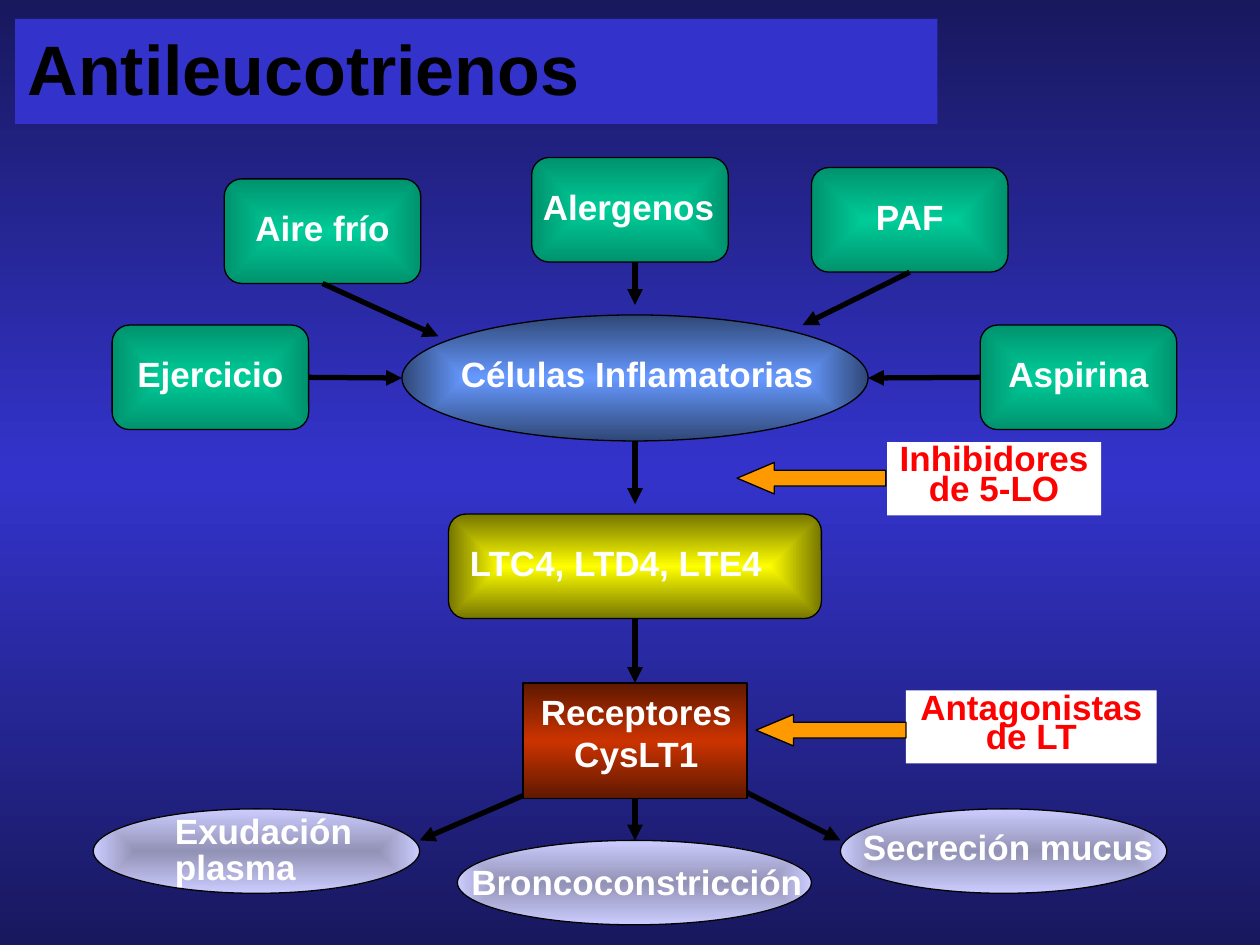
from lxml import etree
from pptx import Presentation
from pptx.dml.color import RGBColor
from pptx.enum.shapes import MSO_CONNECTOR, MSO_SHAPE
from pptx.enum.text import MSO_ANCHOR, MSO_AUTO_SIZE, PP_ALIGN
from pptx.oxml.ns import qn
from pptx.util import Inches, Pt

BLACK = RGBColor(0x00, 0x00, 0x00)
WHITE = RGBColor(0xFF, 0xFF, 0xFF)
RED = RGBColor(0xFF, 0x00, 0x00)
ORANGE = RGBColor(0xFF, 0x99, 0x00)
BLUE = RGBColor(0x33, 0x33, 0xCC)
NAVY = RGBColor(0x18, 0x18, 0x5E)
SKY, SKY_DARK = RGBColor(0x66, 0x99, 0xFF), RGBColor(0x2F, 0x47, 0x76)
GREEN, GREEN_DARK = RGBColor(0x00, 0xCC, 0x99), RGBColor(0x00, 0x92, 0x6D)
YELLOW, YELLOW_DARK = RGBColor(0xFF, 0xFF, 0x00), RGBColor(0x76, 0x76, 0x00)
RUST, RUST_DARK = RGBColor(0xCC, 0x33, 0x00), RGBColor(0x5E, 0x18, 0x00)
LILAC, LILAC_DARK = RGBColor(0xCC, 0xCC, 0xFF), RGBColor(0x92, 0x92, 0xB6)

RECTANGLE = MSO_SHAPE.RECTANGLE
ROUNDED = MSO_SHAPE.ROUNDED_RECTANGLE
ELLIPSE = MSO_SHAPE.OVAL
LEFT_ARROW = MSO_SHAPE.LEFT_ARROW
STRAIGHT = MSO_CONNECTOR.STRAIGHT
LEFT, CENTER = PP_ALIGN.LEFT, PP_ALIGN.CENTER
TOP_SIDE, LEFT_SIDE, BOTTOM_SIDE, RIGHT_SIDE = range(4)
TITLE_ONLY = 5


def inches(values):
    return [Inches(value) for value in values]


def set_gradient(fill, element, colors, radial=False):
    """Spread the colours evenly, downwards or from the centre outwards."""
    fill.gradient()
    gradient = next(element.iter(qn("a:gradFill")))
    for child in list(gradient):
        gradient.remove(child)
    stops = etree.SubElement(gradient, qn("a:gsLst"))
    for index, color in enumerate(colors):
        position = 100000 * index // (len(colors) - 1)
        stop = etree.SubElement(stops, qn("a:gs"), pos=str(position))
        etree.SubElement(stop, qn("a:srgbClr"), val=str(color))
    if radial:
        shade = etree.SubElement(gradient, qn("a:path"), path="shape")
        etree.SubElement(shade, qn("a:fillToRect"),
                         dict.fromkeys("ltrb", "50000"))
    else:
        etree.SubElement(gradient, qn("a:lin"), ang="5400000", scaled="1")


def write_text(frame, text, size=20, color=WHITE, align=CENTER, spacing=None):
    frame.word_wrap = True
    frame.auto_size = MSO_AUTO_SIZE.SHAPE_TO_FIT_TEXT
    frame.vertical_anchor = MSO_ANCHOR.TOP
    paragraph = frame.paragraphs[0]
    paragraph.alignment = align
    paragraph.line_spacing = spacing
    run = paragraph.add_run()
    run.text = text
    run.font.name = "Arial"
    run.font.size = Pt(size)
    run.font.bold = True
    run.font.color.rgb = color


class Diagram:
    outline_width = Pt(0.75)
    arrow_width = Pt(3)

    def __init__(self, slide):
        self.slide = slide
        self.shapes = slide.shapes

    def background(self, colors):
        set_gradient(self.slide.background.fill, self.slide.element, colors)

    def title(self, text, box):
        title = self.shapes.title
        title.left, title.top, title.width, title.height = inches(box)
        title.fill.solid()
        title.fill.fore_color.rgb = BLUE
        write_text(title.text_frame, text, size=40, color=BLACK, align=LEFT)

    def shape(self, kind, box, colors, radial=True):
        shape = self.shapes.add_shape(kind, *inches(box))
        shape.shadow.inherit = False
        if len(colors) == 1:
            shape.fill.solid()
            shape.fill.fore_color.rgb = colors[0]
        else:
            set_gradient(shape.fill, shape.element, colors, radial)
        shape.line.color.rgb = BLACK
        shape.line.width = self.outline_width
        return shape

    def label(self, text, box, fill=None, **text_format):
        label = self.shapes.add_textbox(*inches(box))
        if fill is not None:
            label.fill.solid()
            label.fill.fore_color.rgb = fill
        write_text(label.text_frame, text, **text_format)

    def block_arrow(self, box, head):
        arrow = self.shape(LEFT_ARROW, box, [ORANGE])
        arrow.adjustments[1] = head

    def arrow(self, start, end, begin=None, finish=None):
        """begin and finish are optional (shape, side) pairs to join."""
        arrow = self.shapes.add_connector(STRAIGHT, *inches(start + end))
        if begin:
            arrow.begin_connect(*begin)
        if finish:
            arrow.end_connect(*finish)
        arrow.line.color.rgb = BLACK
        arrow.line.width = self.arrow_width
        line = arrow.line._get_or_add_ln()
        etree.SubElement(line, qn("a:tailEnd"), type="triangle")
        etree.SubElement(arrow.element.spPr, qn("a:effectLst"))


def main():
    presentation = Presentation()
    presentation.slide_width, presentation.slide_height = inches((10, 7.5))
    layout = presentation.slide_layouts[TITLE_ONLY]
    diagram = Diagram(presentation.slides.add_slide(layout))
    diagram.background([NAVY, BLUE, NAVY])
    diagram.title("Antileucotrienos", (0.12, 0.15, 7.32, 0.77))

    # These arrows start behind the shapes they leave.
    axis = 5.04
    diagram.arrow((5.85, 6.25), (6.67, 6.67))
    diagram.arrow((4.3, 6.25), (3.33, 6.67))
    diagram.arrow((axis, 3.33), (axis, 4))

    diagram.shape(ELLIPSE, (3.19, 2.5, 3.7, 1), [SKY, SKY_DARK])
    diagram.label("Células Inflamatorias", (3.56, 2.75, 3.33, 0.43), align=LEFT)

    triggers = {}
    for name, left, top in (
        ("Alergenos", 4.22, 1.25),
        ("Ejercicio", 0.89, 2.58),
        ("Aire frío", 1.78, 1.42),
        ("PAF", 6.44, 1.33),
        ("Aspirina", 7.78, 2.58),
    ):
        triggers[name] = diagram.shape(ROUNDED, (left, top, 1.56, 0.83),
                                       [GREEN, GREEN_DARK])
        if name == "Alergenos":
            diagram.label(name, (4.21, 1.42, 1.73, 0.43), align=LEFT)
        else:
            diagram.label(name, (left, top + 0.17, 1.56, 0.43))

    diagram.arrow((axis, 2.08), (axis, 2.42))
    for name, side, start, end in (
        ("Ejercicio", RIGHT_SIDE, (2.44, 2.97), (3.19, 3)),
        ("Aspirina", LEFT_SIDE, (7.78, 2.97), (6.89, 3)),
        ("PAF", BOTTOM_SIDE, (7.19, 2.17), (6.37, 2.58)),
        ("Aire frío", BOTTOM_SIDE, (2.52, 2.25), (3.48, 2.67)),
    ):
        diagram.arrow(start, end, begin=(triggers[name], side))

    leukotrienes = diagram.shape(ROUNDED, (3.56, 4.08, 2.96, 0.83),
                                 [YELLOW, YELLOW_DARK])
    diagram.label("LTC4, LTD4, LTE4", (3.63, 4.25, 2.81, 0.43), align=LEFT)
    receptors = diagram.shape(RECTANGLE, (4.15, 5.42, 1.78, 0.92),
                              [RUST_DARK, RUST, RUST_DARK], radial=False)
    diagram.label("Receptores CysLT1", (4.1, 5.43, 1.9, 0.77))
    diagram.arrow((axis, 4.91), (axis, 5.42),
                  begin=(leukotrienes, BOTTOM_SIDE),
                  finish=(receptors, TOP_SIDE))
    diagram.arrow((axis, 6.34), (axis, 6.67), begin=(receptors, BOTTOM_SIDE))

    for box in ((0.74, 6.42, 2.59, 0.67), (3.63, 6.67, 2.81, 0.67),
                (6.67, 6.42, 2.59, 0.67)):
        diagram.shape(ELLIPSE, box, [LILAC_DARK, LILAC])
    diagram.label("Exudación plasma", (1.29, 6.43, 1.74, 0.67),
                  align=LEFT, spacing=0.85)
    diagram.label("Broncoconstricción", (3.62, 6.78, 2.87, 0.43))
    diagram.label("Secreción mucus", (6.74, 6.5, 2.52, 0.43))

    for drug, box in (
        ("Inhibidores de 5-LO", (7.04, 3.51, 1.7, 0.58)),
        ("Antagonistas de LT", (7.19, 5.48, 1.99, 0.58)),
    ):
        diagram.label(drug, box, fill=WHITE, color=RED, spacing=0.7)
    diagram.block_arrow((5.85, 3.67, 1.18, 0.25), head=1.18)
    diagram.block_arrow((6, 5.67, 1.19, 0.25), head=1.19)

    presentation.save("out.pptx")


if __name__ == "__main__":
    main()
